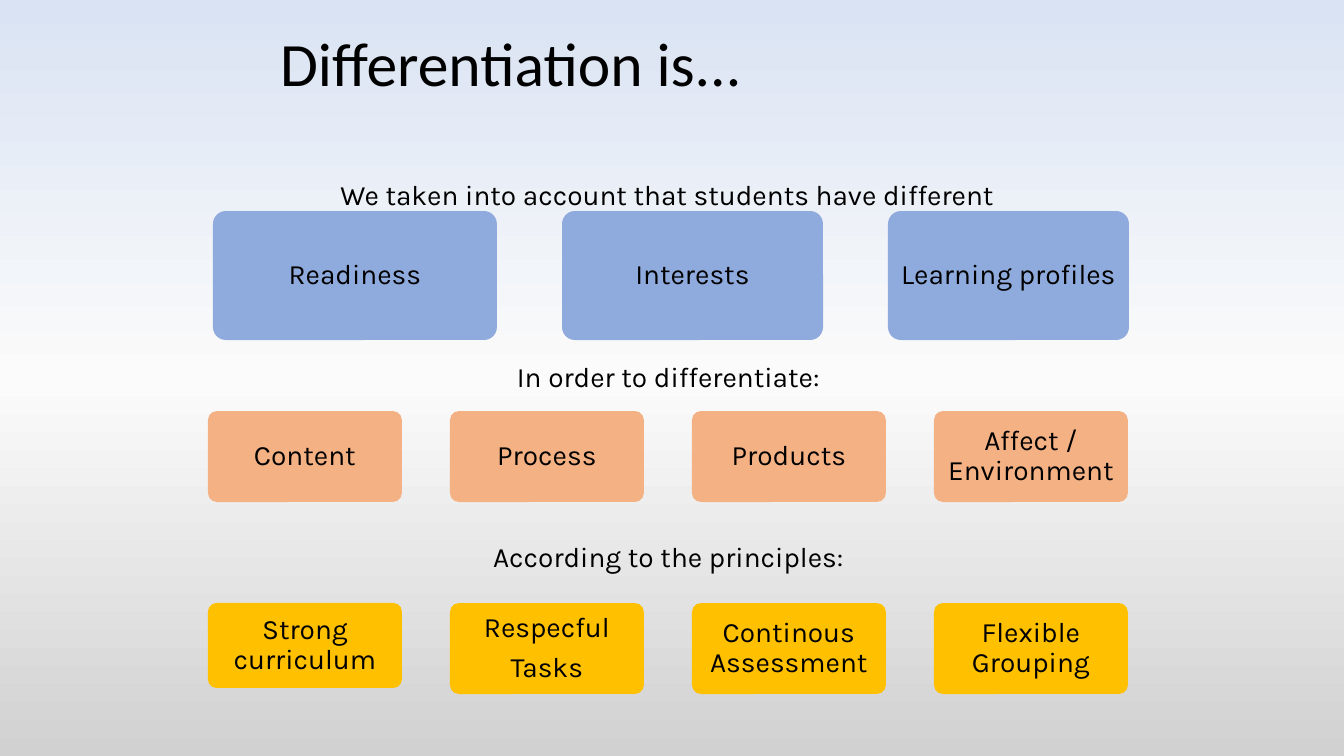
"""Build the slide on what differentiation is."""
from copy import deepcopy

from pptx import Presentation
from pptx.dml.color import RGBColor
from pptx.enum.shapes import MSO_SHAPE
from pptx.enum.text import MSO_ANCHOR, MSO_AUTO_SIZE, PP_ALIGN
from pptx.util import Pt

ROUNDED = MSO_SHAPE.ROUNDED_RECTANGLE
MIDDLE = MSO_ANCHOR.MIDDLE
CENTER, LEFT = PP_ALIGN.CENTER, PP_ALIGN.LEFT
GROW = MSO_AUTO_SIZE.SHAPE_TO_FIT_TEXT

COLORS = {"text": "000000", "students": "8FAADC", "areas": "F4B183", "principles": "FFC000"}
BACKGROUND = [(0, "DAE3F3"), (0.5, "FBFBFB"), (1, "D1D1D1")]

TITLE = "Differentiation is..."
CAPTIONS = [
    ("We taken into account that students have different", 278, 173, 779),
    ("In order to differentiate:", 212, 355, 913),
    ("According to the principles:", 212, 535, 913),
]
CAPTION_HEIGHT = 44

ROWS = [
    {"color": "students", "left": 213, "top": 211, "gap": 65, "boxes": [
        (["Readiness"], 284, 129), (["Interests"], 261, 129),
        (["Learning profiles"], 241, 129)]},
    {"color": "areas", "left": 208, "top": 411, "gap": 48, "boxes": [
        (["Content"], 194, 91), (["Process"], 194, 91),
        (["Products"], 194, 91), (["Affect / Environment"], 194, 91)]},
    {"color": "principles", "left": 208, "top": 603, "gap": 48, "boxes": [
        (["Strong curriculum"], 194, 85), (["Respecful", "Tasks"], 194, 91),
        (["Continous Assessment"], 194, 91), (["Flexible Grouping"], 194, 91)]},
]


def px(*lengths):
    """Turn px into EMU."""
    return [round(length * 914400 / 100.8) for length in lengths]


def write(frame, lines, font="Karla", size=20, align=CENTER, line_spacing=None, space_after=None):
    """Fill a text frame with one paragraph per line."""
    frame.word_wrap = True
    for index, line in enumerate(lines):
        paragraph = frame.add_paragraph() if index else frame.paragraphs[0]
        paragraph.alignment = align
        paragraph.line_spacing = line_spacing
        paragraph.space_after = space_after
        run = paragraph.add_run()
        run.text = line
        run.font.name = font
        run.font.size = Pt(size)
        run.font.color.rgb = RGBColor.from_string(COLORS["text"])


def paint_background(slide):
    """Give the slide its vertical three-stop gradient."""
    fill = slide.background.fill
    fill.gradient()
    fill.gradient_angle = 270
    stop_list = slide.element.xpath(".//p:bg//a:gsLst")[0]
    stop_list.append(deepcopy(stop_list[0]))
    for stop, (position, color) in zip(fill.gradient_stops, BACKGROUND):
        stop.position = position
        stop.color.rgb = RGBColor.from_string(color)


def add_row(slide, row):
    """Place a row of rounded boxes separated by an equal gap."""
    left = row["left"]
    for lines, width, height in row["boxes"]:
        box = slide.shapes.add_shape(ROUNDED, *px(left, row["top"], width, height))
        box.adjustments[0] = 0.1
        box.shadow.inherit = False
        box.fill.solid()
        box.fill.fore_color.rgb = RGBColor.from_string(COLORS[row["color"]])
        box.line.fill.background()
        frame = box.text_frame
        frame.vertical_anchor = MIDDLE
        frame.margin_left, frame.margin_top, frame.margin_right, frame.margin_bottom = px(4, 3, 4, 3)
        write(frame, lines, line_spacing=0.9, space_after=Pt(7))
        left += width + row["gap"]


def main():
    """Assemble and save the slide."""
    deck = Presentation()
    deck.slide_width, deck.slide_height = px(1344, 756)
    slide = deck.slides.add_slide(deck.slide_layouts[5])
    paint_background(slide)

    title = slide.shapes.title
    title.left, title.top, title.width, title.height = px(270, 25, 843, 84)
    title.text_frame.vertical_anchor = MIDDLE
    write(title.text_frame, [TITLE], "Calibri", 44, LEFT, 0.9)

    for row in ROWS:
        add_row(slide, row)
    for caption, left, top, width in CAPTIONS:
        box = slide.shapes.add_textbox(*px(left, top, width, CAPTION_HEIGHT))
        write(box.text_frame, [caption])
        box.text_frame.auto_size = GROW

    deck.save("out.pptx")


if __name__ == "__main__":
    main()
